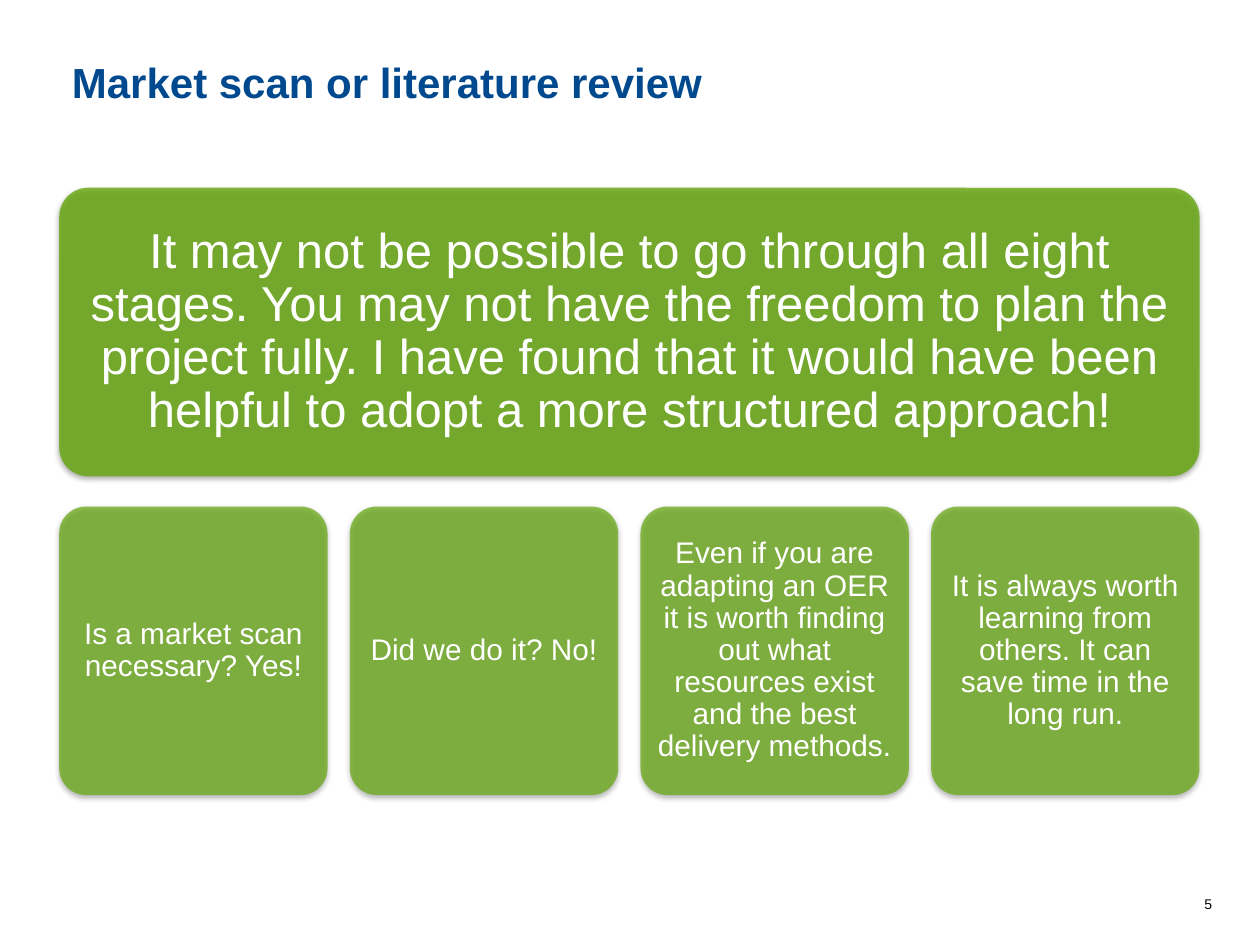
"""Build the market scan slide: a headline panel above a row of four cards."""
from lxml import etree
from pptx import Presentation
from pptx.dml.color import RGBColor
from pptx.enum.shapes import MSO_SHAPE
from pptx.enum.text import MSO_ANCHOR, PP_ALIGN
from pptx.oxml import parse_xml
from pptx.oxml.ns import nsdecls, qn
from pptx.util import Inches, Pt

ROUNDED = MSO_SHAPE.ROUNDED_RECTANGLE
TOP, MIDDLE = MSO_ANCHOR.TOP, MSO_ANCHOR.MIDDLE
LEFT, CENTER, RIGHT = PP_ALIGN.LEFT, PP_ALIGN.CENTER, PP_ALIGN.RIGHT
BLUE = RGBColor(0x01, 0x49, 0x8E)
GREEN = RGBColor(0x64, 0xA7, 0x0B)
WHITE = RGBColor(0xFF, 0xFF, 0xFF)
BLACK = RGBColor(0x00, 0x00, 0x00)
SHADOW = (
    f'<a:effectLst {nsdecls("a")}>'
    '<a:outerShdw blurRad="39370" dist="20320" dir="5400000" rotWithShape="0">'
    '<a:srgbClr val="000000"><a:alpha val="38000"/></a:srgbClr>'
    '</a:outerShdw></a:effectLst>'
)
PAD = 0.06


def write(sp, text, size, color, align, anchor, bold=False):
    tf = sp.text_frame
    tf.word_wrap = True
    tf.vertical_anchor = anchor
    p = tf.paragraphs[0]
    p.alignment = align
    r = p.add_run()
    r.text = text
    r.font.name = "Arial"
    r.font.size = Pt(size)
    r.font.bold = bold
    r.font.color.rgb = color
    return tf


def add_card(left, top, width, height, text, size, opacity, inset):
    sp = s.shapes.add_shape(ROUNDED, Inches(left), Inches(top), Inches(width), Inches(height))
    sp.adjustments[0] = 0.1
    sp.fill.solid()
    sp.fill.fore_color.rgb = GREEN
    color = sp.element.spPr.find(qn("a:solidFill"))[0]
    etree.SubElement(color, qn("a:alpha"), val=str(opacity * 1000))
    sp.line.fill.background()
    sp.element.spPr.append(parse_xml(SHADOW))
    label = s.shapes.add_textbox(Inches(left + PAD), Inches(top + PAD),
                                 Inches(width - 2 * PAD), Inches(height - 2 * PAD))
    tf = write(label, text, size, WHITE, CENTER, MIDDLE)
    tf.margin_left = tf.margin_right = tf.margin_top = tf.margin_bottom = Inches(inset)
    tf.paragraphs[0].line_spacing = 0.9


prs = Presentation()
prs.slide_width, prs.slide_height = Inches(10), Inches(7.5)
s = prs.slides.add_slide(prs.slide_layouts[5])

title = s.shapes.title
title.left, title.top, title.width, title.height = Inches(0.47), Inches(0.4), Inches(9.06), Inches(0.5)
write(title, "Market scan or literature review", 24, BLUE, LEFT, TOP, True)

GRID_LEFT, GRID_TOP, GRID_WIDTH = 0.47, 1.49, 9.05
ROW_HEIGHT, ROW_PITCH = 2.29, 2.53
CARD_WIDTH = 2.13
CARDS = [
    "Is a market scan necessary? Yes!",
    "Did we do it? No!",
    "Even if you are adapting an OER it is worth finding out what resources exist "
    "and the best delivery methods.",
    "It is always worth learning from others. It can save time in the long run.",
]
HEADLINE = (
    "It may not be possible to go through all eight stages. You may not have the freedom "
    "to plan the project fully. I have found that it would have been helpful to adopt "
    "a more structured approach!"
)
add_card(GRID_LEFT, GRID_TOP, GRID_WIDTH, ROW_HEIGHT, HEADLINE, 28, 80, 0.12)

card_pitch = (GRID_WIDTH - CARD_WIDTH) / (len(CARDS) - 1)
for col, text in enumerate(CARDS):
    add_card(GRID_LEFT + col * card_pitch, GRID_TOP + ROW_PITCH, CARD_WIDTH, ROW_HEIGHT,
             text, 17, 70, 0.07)

number = s.shapes.add_textbox(Inches(5.39), Inches(7.06), Inches(4.33), Inches(0.24))
write(number, "5", 8, BLACK, RIGHT, TOP)

prs.save("out.pptx")
